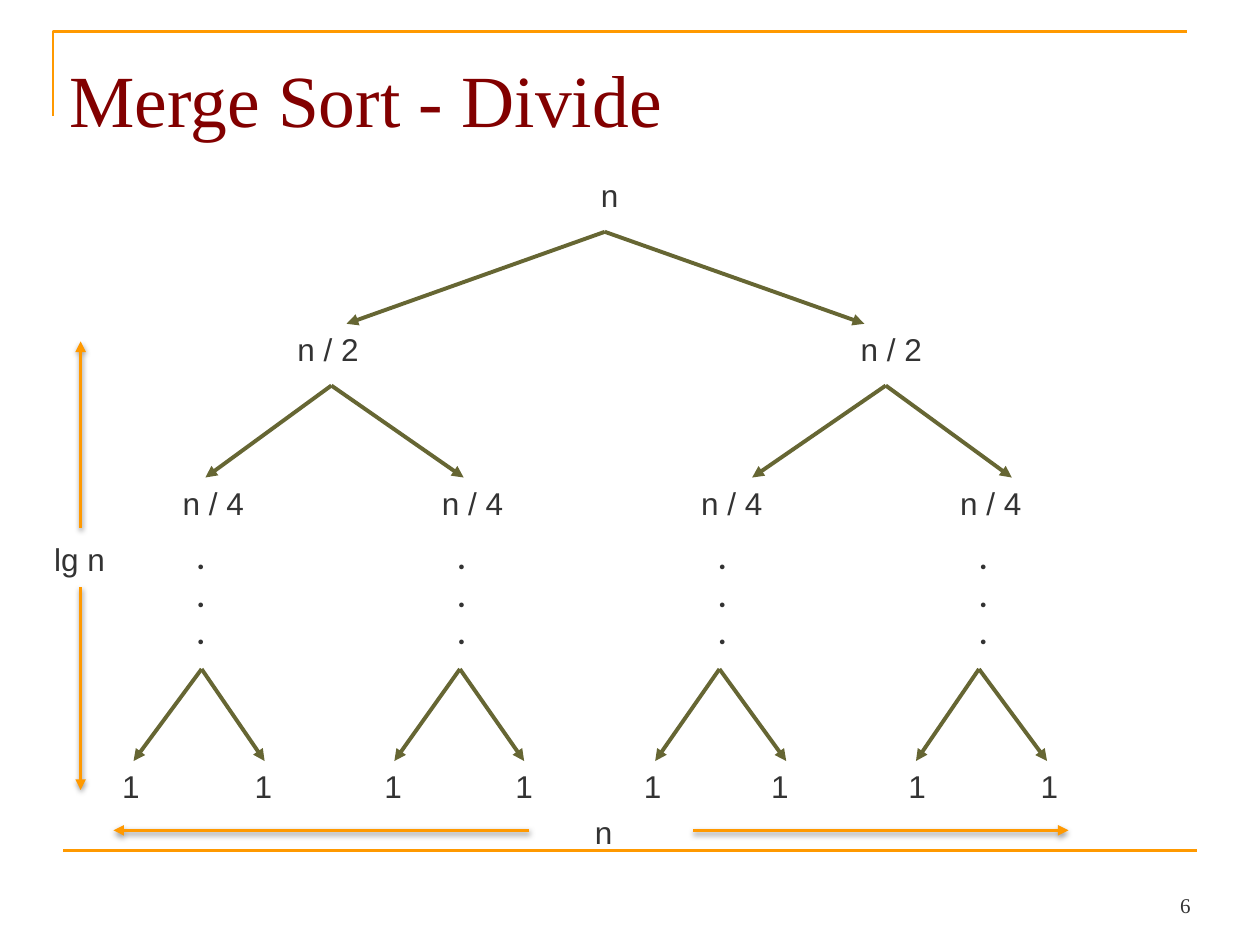
"""Build a slide showing the divide tree of merge sort."""
from lxml import etree
from pptx import Presentation, util as u
from pptx.dml.color import RGBColor
from pptx.enum import shapes, text
from pptx.oxml import parse_xml
from pptx.oxml.ns import nsdecls, qn

COLORS = {"rule": "FF9900", "title": "820000", "ink": "333333", "branch": "666633"}
SHADOW = (
    f'<a:effectLst {nsdecls("a")}><a:outerShdw blurRad="38100" dist="20320" dir="5400000" rotWithShape="0">'
    '<a:srgbClr val="000000"><a:alpha val="38000"/></a:srgbClr></a:outerShdw></a:effectLst>'
)
COLS, ROWS = 100, 75

prs = Presentation()
prs.slide_width, prs.slide_height = u.Inches(10), u.Inches(7.5)
cw, rh = prs.slide_width / COLS, prs.slide_height / ROWS
s = prs.slides.add_slide(prs.slide_layouts[6])


def label(words, col, row, cols, rows=3.8, size=18, font="Arial", color="ink",
          bold=False, wrap=False, align=text.PP_ALIGN.LEFT):
    sp = s.shapes.add_textbox(round(col * cw), round(row * rh), round(cols * cw), round(rows * rh))
    tf = sp.text_frame
    tf.word_wrap = wrap
    tf.margin_left = tf.margin_right = tf.margin_top = tf.margin_bottom = u.Inches(0.05)
    tf.text = words
    for p in tf.paragraphs:
        p.alignment = align
        p.font.size, p.font.name, p.font.bold = u.Pt(size), font, bold
        p.font.color.rgb = RGBColor.from_string(COLORS[color])
    return tf


def line(x1, y1, x2, y2, color="rule", width=2, arrow=True, shadow=False):
    sp = s.shapes.add_connector(shapes.MSO_CONNECTOR.STRAIGHT, round(x1 * cw), round(y1 * rh),
                                round(x2 * cw), round(y2 * rh))
    sp.line.color.rgb = RGBColor.from_string(COLORS[color])
    sp.line.width = u.Pt(width)
    if arrow:
        etree.SubElement(sp.line._get_or_add_ln(), qn("a:tailEnd"), type="triangle")
    sp._element.spPr.append(parse_xml(SHADOW if shadow else f'<a:effectLst {nsdecls("a")}/>'))


fb = s.shapes.build_freeform(round(4.2 * cw), round(9.2 * rh))
fb.add_line_segments([(round(x * cw), round(2.5 * rh)) for x in (4.2, 94.2)], close=False)
corner = fb.convert_to_shape()
corner.shadow.inherit = False
corner.fill.background()
corner.line.color.rgb = RGBColor.from_string(COLORS["rule"])
corner.line.width = u.Pt(1.5)
line(5, 67.5, 95, 67.5, width=1.5, arrow=False)

number = label("6", 93.1, 70.5, 1.9, 2.8, size=12, font="Times New Roman", align=text.PP_ALIGN.RIGHT)
number.vertical_anchor = text.MSO_ANCHOR.BOTTOM
title = label("Merge Sort - Divide", 5, 3, 90, 10.3, size=42, font="Times New Roman", color="title", wrap=True)
title.margin_top = u.Inches(0.13)

label("n", 47.2, 13.5, 5.6, wrap=True)
for col in (23.1, 67.8):
    label("n / 2", col, 25.7, 5.9)
for i in range(4):
    label("n / 4", 14 + 20.57 * i, 37.9, 6)
    label(".\n.\n.", 15.1 + 20.7 * i, 42.2, 2.8, 9.7, font="Calibri", bold=True)
for col in (9.2, 19.7, 30, 40.4, 50.6, 60.7, 71.6, 82.1):
    label("1", col, 60.4, 2.5)

BRANCH_ROWS = 7.3
branches = {
    18.4: [(48, 27.5, 68.6)],
    30.6: [(26.3, 16.3, 36.8), (70.3, 59.7, 80.3)],
    53.1: [(16, 10.6, 21), (36.5, 31.3, 41.6), (57.1, 52, 62.4), (77.7, 72.7, 83.1)],
}
for row, forks in branches.items():
    for apex, *tips in forks:
        for tip in tips:
            line(apex, row, tip, row + BRANCH_ROWS, color="branch", width=2.25)

for ends in ((6.4, 41.9, 6.4, 27.1), (6.4, 46.6, 6.4, 62.7),
             (42, 65.9, 9, 65.9), (55, 65.9, 84.8, 65.9)):
    line(*ends, shadow=True)
label("lg n", 3.8, 42.4, 5.2)
label("n", 45.9, 64, 3.2, wrap=True, align=text.PP_ALIGN.RIGHT)

prs.save("out.pptx")
